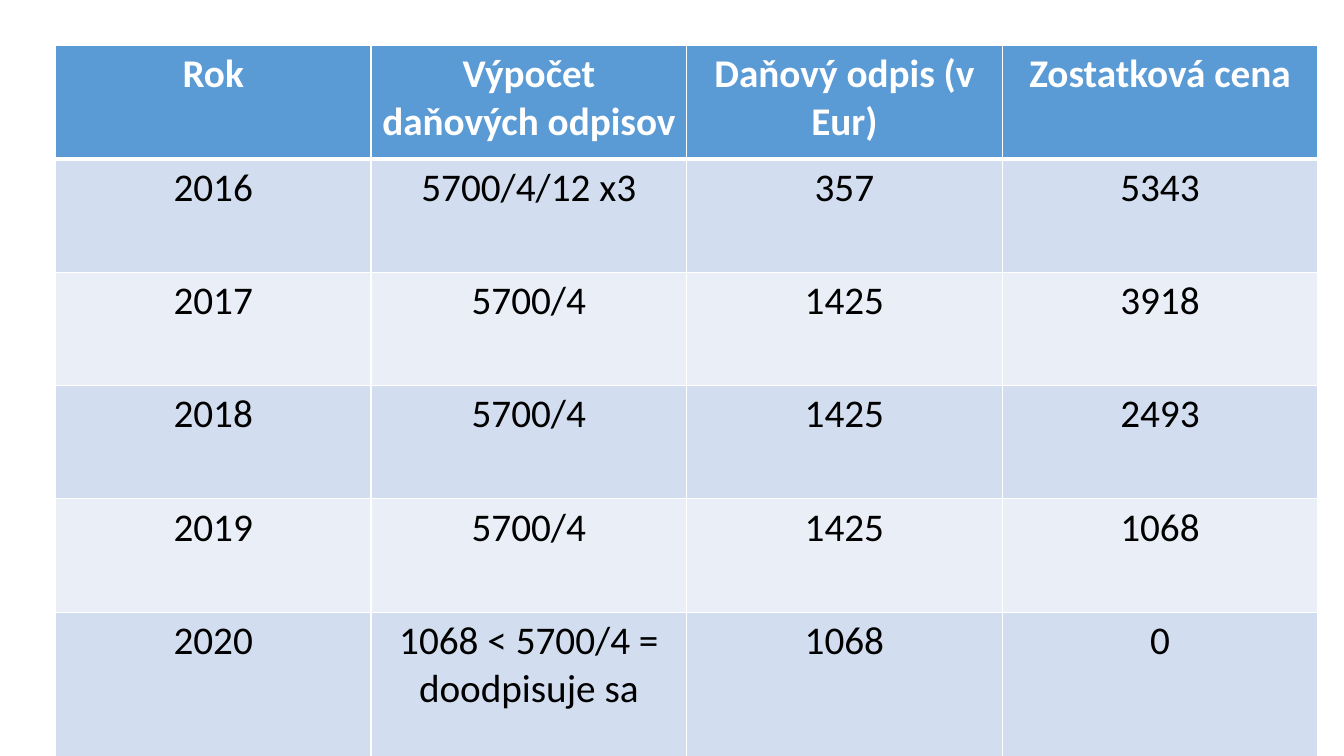
import dataclasses

import lxml.etree
import pptx
import pptx.dml.color
import pptx.enum.text
import pptx.oxml.ns
import pptx.table
import pptx.util

WHITE = pptx.dml.color.RGBColor(0xFF, 0xFF, 0xFF)
BLACK = pptx.dml.color.RGBColor(0x00, 0x00, 0x00)
HEADER_BLUE = pptx.dml.color.RGBColor(0x5B, 0x9B, 0xD5)
BAND_DARK = pptx.dml.color.RGBColor(0xD2, 0xDE, 0xEF)
BAND_LIGHT = pptx.dml.color.RGBColor(0xEA, 0xEF, 0xF7)

SLIDE_WIDTH = pptx.util.Inches(13.33)
SLIDE_HEIGHT = pptx.util.Inches(7.5)
TABLE_LEFT = pptx.util.Inches(0.55)
TABLE_TOP = pptx.util.Inches(0.45)
COLUMN = pptx.util.Inches(3.13)
ROW = pptx.util.Inches(1.125)
LAST_ROW = pptx.util.Inches(1.5)
THIN = pptx.util.Pt(1)
THICK = pptx.util.Pt(3)


@dataclasses.dataclass(frozen=True)
class CellStyle:
    fill: pptx.dml.color.RGBColor
    ink: pptx.dml.color.RGBColor = BLACK
    bold: bool = False
    top: int = THIN
    bottom: int = THIN


@dataclasses.dataclass(frozen=True)
class DepreciationRow:
    year: str
    calculation: str
    deduction: str
    residual: str


DEPRECIATION = [
    DepreciationRow("Rok", "Výpočet daňových odpisov", "Daňový odpis (v Eur)", "Zostatková cena"),
    DepreciationRow("2016", "5700/4/12 x3", "357", "5343"),
    DepreciationRow("2017", "5700/4", "1425", "3918"),
    DepreciationRow("2018", "5700/4", "1425", "2493"),
    DepreciationRow("2019", "5700/4", "1425", "1068"),
    DepreciationRow("2020", "1068 < 5700/4 = doodpisuje sa", "1068", "0"),
]


def row_style(index: int) -> CellStyle:
    if index == 0:
        return CellStyle(HEADER_BLUE, WHITE, bold=True, bottom=THICK)
    band = BAND_DARK if index % 2 else BAND_LIGHT
    return CellStyle(band, top=THICK if index == 1 else THIN)


def add_border(cell: pptx.table._Cell, side: str, width: int) -> None:
    qn = pptx.oxml.ns.qn
    properties = cell._tc.get_or_add_tcPr()
    line = lxml.etree.SubElement(properties, qn(f"a:{side}"), w=str(width))
    solid = lxml.etree.SubElement(line, qn("a:solidFill"))
    lxml.etree.SubElement(solid, qn("a:srgbClr"), val=str(WHITE))


def write_cell(cell: pptx.table._Cell, text: str, style: CellStyle) -> None:
    borders = {"lnL": THIN, "lnR": THIN, "lnT": style.top, "lnB": style.bottom}
    for side, width in borders.items():
        add_border(cell, side, width)
    cell.fill.solid()
    cell.fill.fore_color.rgb = style.fill
    cell.text_frame.text = text
    paragraph = cell.text_frame.paragraphs[0]
    paragraph.alignment = pptx.enum.text.PP_ALIGN.CENTER
    font = paragraph.runs[0].font
    font.name = "Calibri"
    font.size = pptx.util.Pt(28)
    font.bold = style.bold
    font.color.rgb = style.ink


def main() -> None:
    presentation = pptx.Presentation()
    presentation.slide_width = SLIDE_WIDTH
    presentation.slide_height = SLIDE_HEIGHT
    slide = presentation.slides.add_slide(presentation.slide_layouts[6])

    row_count = len(DEPRECIATION)
    column_count = len(dataclasses.fields(DepreciationRow))
    schedule = slide.shapes.add_table(
        row_count, column_count, TABLE_LEFT, TABLE_TOP,
        column_count * COLUMN, (row_count - 1) * ROW + LAST_ROW,
    ).table
    for column in schedule.columns:
        column.width = COLUMN
    for index, entry in enumerate(DEPRECIATION):
        schedule.rows[index].height = LAST_ROW if index == row_count - 1 else ROW
        for position, text in enumerate(dataclasses.astuple(entry)):
            write_cell(schedule.cell(index, position), text, row_style(index))

    presentation.save("out.pptx")


if __name__ == "__main__":
    main()
